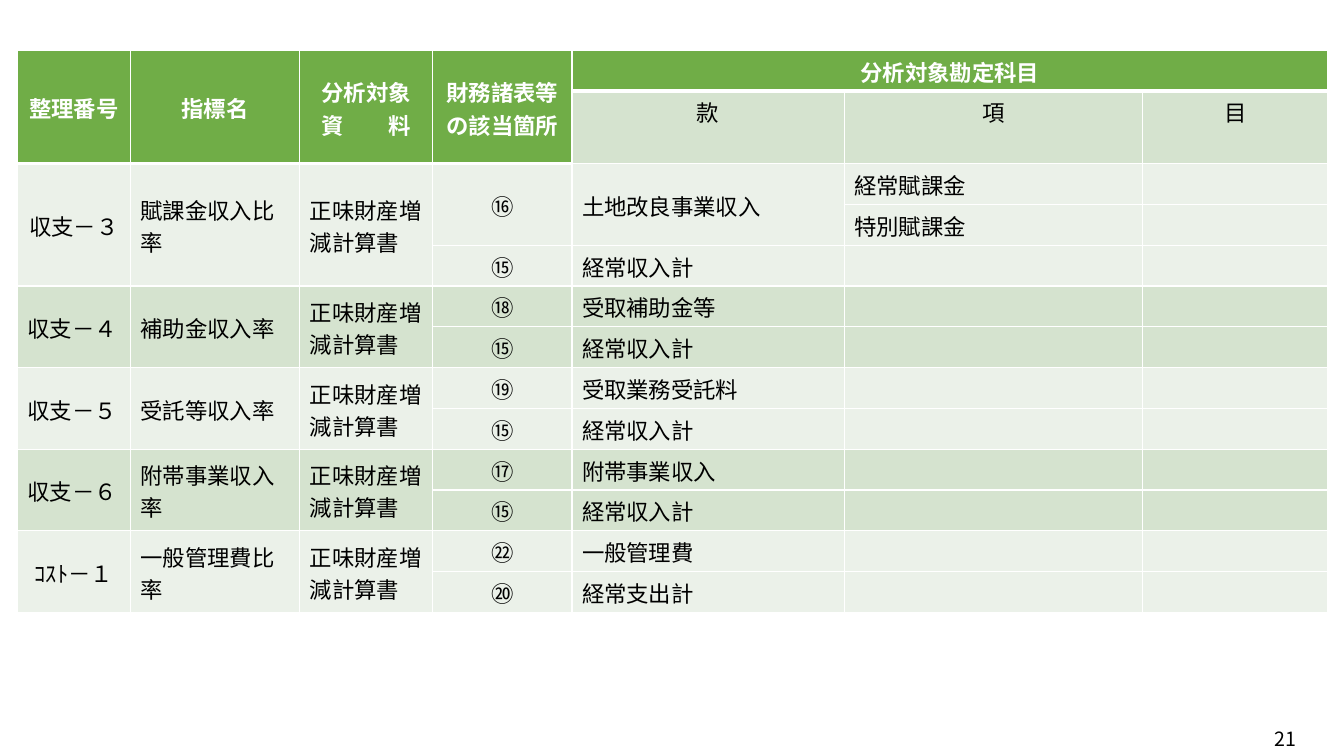
from dataclasses import dataclass
from itertools import accumulate

from lxml.etree import SubElement
from pptx import Presentation
from pptx.dml.color import RGBColor
from pptx.enum.text import MSO_ANCHOR as Anchor, MSO_AUTO_SIZE as AutoSize, PP_ALIGN as Align
from pptx.oxml.ns import qn
from pptx.util import Inches, Pt

FONT = "Noto Sans CJK JP"
COLORS = {"head": "70AD47", "dark": "D5E3CF", "light": "EBF1E9",
          "white": "FFFFFF", "text": "000000"}
SIZE = 16

# Slide and grid
W, H = Inches(13.33), Inches(7.5)
LEFT, TOP = 0.013, 0.067  # shares of the slide
COLS = [share / 1333 for share in (112, 168, 132, 138, 270, 296, 184)]
HEAD_ROWS = [0.048, 0.084]
BODY_ROW = 0.054


@dataclass
class Account:
    mark: str
    kan: str
    kou: tuple[str, ...] = ("",)


@dataclass
class Indicator:
    number: str
    name: str
    accounts: list[Account]
    align: Align = Align.LEFT

    @property
    def rows(self) -> int:
        return sum(len(a.kou) for a in self.accounts)


@dataclass
class Cell:
    row: int
    col: int
    text: str
    fill: str
    align: Align = Align.LEFT
    rows: int = 1
    cols: int = 1
    color: str = "text"


SOURCE = "正味財産増減計算書"
INCOME = Account("⑮", "経常収入計")
INDICATORS = [
    Indicator("収支－３", "賦課金収入比率",
              [Account("⑯", "土地改良事業収入", ("経常賦課金", "特別賦課金")), INCOME],
              Align.CENTER),
    Indicator("収支－４", "補助金収入率", [Account("⑱", "受取補助金等"), INCOME]),
    Indicator("収支－５", "受託等収入率", [Account("⑲", "受取業務受託料"), INCOME]),
    Indicator("収支－６", "附帯事業収入率", [Account("⑰", "附帯事業収入"), INCOME]),
    Indicator("ｺｽﾄ－１", "一般管理費比率",
              [Account("㉒", "一般管理費"), Account("⑳", "経常支出計")], Align.CENTER),
]
HEADINGS = ["整理番号", "指標名", "分析対象\n資　　料", "財務諸表等\nの該当箇所"]
LEVELS = ["款", "項", "目"]


def rgb(name: str) -> RGBColor:
    return RGBColor.from_string(COLORS[name])


def add_text(p, text: str, size: int, color: str, bold: bool = False) -> None:
    r = p.add_run()
    r.text = text
    r.font.size, r.font.bold = Pt(size), bold
    r.font.color.rgb = rgb(color)
    r.font.name = FONT
    SubElement(r.font._element, qn("a:ea"), typeface=FONT)


def add_border(tc, side: str, points: int) -> None:
    ln = SubElement(tc.get_or_add_tcPr(), qn(f"a:ln{side}"), w=str(Pt(points)))
    fill = SubElement(ln, qn("a:solidFill"))
    SubElement(fill, qn("a:srgbClr"), val=COLORS["white"])


def prepare(tbl) -> None:
    """Give every grid cell its margins, borders and empty-line size."""
    for i, row in enumerate(tbl.rows):
        for j, cell in enumerate(row.cells):
            head_end = 1 if j < len(HEADINGS) else 0
            cell.margin_top, cell.margin_bottom = Inches(0.05), Inches(0.03)
            for side, heavy in (("L", False), ("R", False),
                                ("T", i == head_end + 1), ("B", i == head_end)):
                add_border(cell._tc, side, 3 if heavy else 1)
            SubElement(cell.text_frame.paragraphs[0]._p, qn("a:endParaRPr"),
                       sz=str(SIZE * 100))


def draw_cell(tbl, c: Cell) -> None:
    cell = tbl.cell(c.row, c.col)
    if c.rows * c.cols > 1:
        cell.merge(tbl.cell(c.row + c.rows - 1, c.col + c.cols - 1))
    cell.fill.solid()
    cell.fill.fore_color.rgb = rgb(c.fill)
    cell.vertical_anchor = Anchor.MIDDLE if c.rows > 1 else Anchor.TOP
    if not c.text:
        return
    tf = cell.text_frame
    for i, line in enumerate(c.text.split("\n")):
        p = tf.add_paragraph() if i else tf.paragraphs[0]
        p.alignment = c.align
        add_text(p, line, SIZE, c.color, bold=c.fill == "head")


def header_cells() -> list[Cell]:
    first = len(HEADINGS)
    cells = [Cell(0, j, t, "head", Align.CENTER, rows=2, color="white")
             for j, t in enumerate(HEADINGS)]
    cells.append(Cell(0, first, "分析対象勘定科目", "head", Align.CENTER,
                      cols=len(LEVELS), color="white"))
    cells += [Cell(1, first + j, t, "dark", Align.CENTER) for j, t in enumerate(LEVELS)]
    return cells


def indicator_cells(ind: Indicator, row: int, fill: str) -> list[Cell]:
    cells = [Cell(row, 0, ind.number, fill, ind.align, ind.rows),
             Cell(row, 1, ind.name, fill, rows=ind.rows),
             Cell(row, 2, SOURCE, fill, rows=ind.rows)]
    for a in ind.accounts:
        n = len(a.kou)
        cells += [Cell(row, 3, a.mark, fill, Align.CENTER, n),
                  Cell(row, 4, a.kan, fill, rows=n)]
        for kou in a.kou:
            cells += [Cell(row, 5, kou, fill), Cell(row, 6, "", fill)]
            row += 1
    return cells


def draw_table(s) -> None:
    starts = list(accumulate((i.rows for i in INDICATORS), initial=len(HEAD_ROWS)))
    heights = HEAD_ROWS + [BODY_ROW] * (starts[-1] - len(HEAD_ROWS))
    tbl = s.shapes.add_table(len(heights), len(COLS), int(W * LEFT), int(H * TOP),
                             int(W * sum(COLS)), int(H * sum(heights))).table
    tbl.first_row = tbl.horz_banding = False
    for col, share in zip(tbl.columns, COLS):
        col.width = int(W * share)
    for row, share in zip(tbl.rows, heights):
        row.height = int(H * share)
    prepare(tbl)
    cells = header_cells()
    for k, (ind, row) in enumerate(zip(INDICATORS, starts)):
        cells += indicator_cells(ind, row, "dark" if k % 2 else "light")
    for c in cells:
        draw_cell(tbl, c)


def draw_page_number(s, number: str) -> None:
    tf = s.shapes.add_textbox(int(W * 0.908), int(H * 0.955),
                              int(W * 0.064), int(H * 0.045)).text_frame
    tf.word_wrap = True
    tf.auto_size = AutoSize.SHAPE_TO_FIT_TEXT
    p = tf.paragraphs[0]
    p.alignment = Align.RIGHT
    add_text(p, number, 14, "text")


def main() -> None:
    prs = Presentation()
    prs.slide_width, prs.slide_height = W, H
    s = prs.slides.add_slide(prs.slide_layouts[6])
    draw_table(s)
    draw_page_number(s, "21")
    prs.save("out.pptx")


if __name__ == "__main__":
    main()
